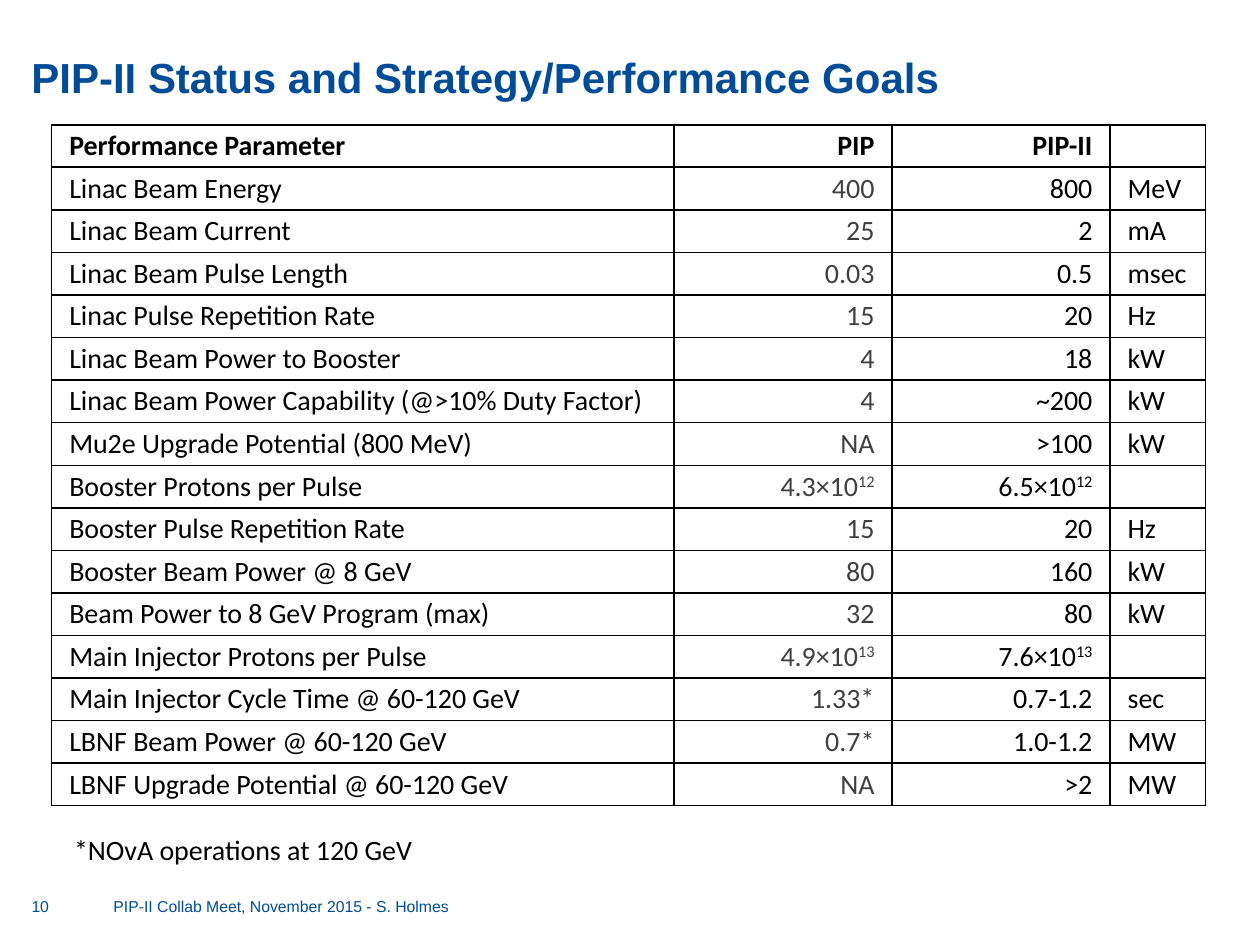
from lxml import etree
from pptx import Presentation
from pptx.dml.color import RGBColor
from pptx.enum.text import MSO_ANCHOR, PP_ALIGN
from pptx.oxml.ns import qn
from pptx.util import Inches, Pt

LEFT, RIGHT = PP_ALIGN.LEFT, PP_ALIGN.RIGHT
TOP, MIDDLE, BOTTOM = MSO_ANCHOR.TOP, MSO_ANCHOR.MIDDLE, MSO_ANCHOR.BOTTOM
BLUE, BLACK, GREY, WHITE = "004C97", "000000", "404040", "FFFFFF"

COLUMN_WIDTHS = (4.94, 1.73, 1.73, 0.76)
COLUMN_ALIGNS = (LEFT, RIGHT, RIGHT, LEFT)
COLUMN_COLORS = (BLACK, GREY, BLACK, BLACK)
GOALS = [
    ("Performance Parameter", "PIP", "PIP-II", ""),
    ("Linac Beam Energy", "400", "800", "MeV"),
    ("Linac Beam Current", "25", "2", "mA"),
    ("Linac Beam Pulse Length", "0.03", "0.5", "msec"),
    ("Linac Pulse Repetition Rate", "15", "20", "Hz"),
    ("Linac Beam Power to Booster", "4", "18", "kW"),
    ("Linac Beam Power Capability (@>10% Duty Factor)", "4", "~200", "kW"),
    ("Mu2e Upgrade Potential (800 MeV)", "NA", ">100", "kW"),
    ("Booster Protons per Pulse", "4.3×10^12", "6.5×10^12", ""),
    ("Booster Pulse Repetition Rate", "15", "20", "Hz"),
    ("Booster Beam Power @ 8 GeV", "80", "160", "kW"),
    ("Beam Power to 8 GeV Program (max)", "32", "80", "kW"),
    ("Main Injector Protons per Pulse", "4.9×10^13", "7.6×10^13", ""),
    ("Main Injector Cycle Time @ 60-120 GeV", "1.33*", "0.7-1.2", "sec"),
    ("LBNF Beam Power @ 60-120 GeV", "0.7*", "1.0-1.2", "MW"),
    ("LBNF Upgrade Potential @ 60-120 GeV", "NA", ">2", "MW"),
]


def rgb(color):
    """Turn a hex string into a colour."""
    return RGBColor.from_string(color)


def style(para, name, size, color, bold=False):
    """Set the font of a whole paragraph."""
    font = para.font
    font.name, font.size, font.bold = name, Pt(size), bold
    font.color.rgb = rgb(color)


def add_text(page, area, text, name, size, color, bold=False, anchor=TOP, inset=(0, 0)):
    """Place one line of text in an area given as left, top, width, height."""
    frame = page.shapes.add_textbox(*map(Inches, area)).text_frame
    frame.word_wrap = True
    frame.vertical_anchor = anchor
    frame.margin_left = frame.margin_right = Inches(inset[0])
    frame.margin_top = frame.margin_bottom = Inches(inset[1])
    para = frame.paragraphs[0]
    para.text = text
    style(para, name, size, color, bold)


def set_borders(cell, top, bottom):
    """Draw black borders, with the top and bottom widths in points."""
    properties = cell._tc.get_or_add_tcPr()
    widths = {"a:lnL": 1, "a:lnR": 1, "a:lnT": top, "a:lnB": bottom}
    for index, (tag, width) in enumerate(widths.items()):
        line = etree.Element(qn(tag), w=str(Pt(width)))
        fill = etree.SubElement(line, qn("a:solidFill"))
        etree.SubElement(fill, qn("a:srgbClr"), val=BLACK)
        properties.insert(index, line)


def fill_cell(cell, text, align, color, bold):
    """Write a cell, raising what follows a caret."""
    cell.fill.solid()
    cell.fill.fore_color.rgb = rgb(WHITE)
    cell.vertical_anchor = MIDDLE
    cell.margin_left = cell.margin_right = Inches(0.14)
    cell.margin_top = cell.margin_bottom = 0
    para = cell.text_frame.paragraphs[0]
    para.alignment = align
    base, _, exponent = text.partition("^")
    if base:
        para.add_run().text = base
    if exponent:
        span = para.add_run()
        span.text = exponent
        span._r.get_or_add_rPr().set("baseline", "30000")
    style(para, "Calibri", 16, color, bold)


def add_goals_table(page, left, top, width, height):
    """Build the table of performance goals."""
    table = page.shapes.add_table(
        len(GOALS), len(COLUMN_WIDTHS),
        Inches(left), Inches(top), Inches(width), Inches(height),
    ).table
    table.first_row = table.horz_banding = False
    for column, column_width in zip(table.columns, COLUMN_WIDTHS):
        column.width = Inches(column_width)
    for number, goal in enumerate(GOALS):
        header = number == 0
        for index, text in enumerate(goal):
            cell = table.cell(number, index)
            color = BLACK if header else COLUMN_COLORS[index]
            fill_cell(cell, text, COLUMN_ALIGNS[index], color, header)
            set_borders(cell, 1.5 if number == 1 else 1, 1.5 if header else 1)


def add_footer(page, left, top, number, text):
    """Place the page number and the footer text."""
    add_text(page, (left, top, 0.49, 0.26), number, "Arial", 9, BLUE)
    add_text(page, (left + 0.65, top, 4.85, 0.26), text, "Arial", 9, BLUE)


def main():
    """Build and save the slide."""
    deck = Presentation()
    deck.slide_width, deck.slide_height = Inches(10), Inches(7.5)
    page = deck.slides.add_slide(deck.slide_layouts[6])
    add_text(page, (0.25, 0.11, 8.3, 0.7), "PIP-II Status and Strategy/Performance Goals",
             "Arial", 24, BLUE, bold=True, anchor=BOTTOM)
    add_goals_table(page, 0.41, 0.99, sum(COLUMN_WIDTHS), 5.41)
    add_text(page, (0.49, 6.56, 6.64, 0.37), "*NOvA operations at 120 GeV",
             "Calibri", 16, BLACK, inset=(0.1, 0.05))
    add_footer(page, 0.25, 7.12, "10", "PIP-II Collab Meet, November 2015 - S. Holmes")
    deck.save("out.pptx")


if __name__ == "__main__":
    main()
